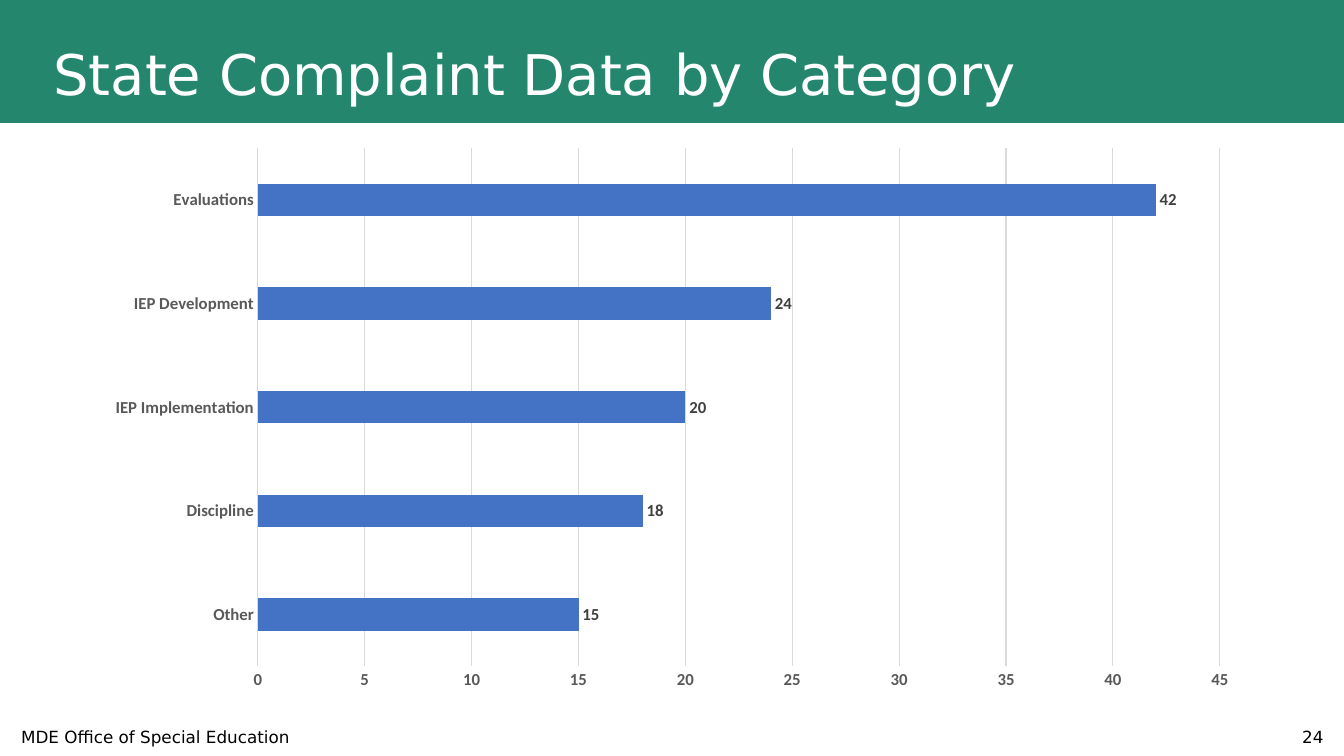
from pptx import Presentation
from pptx.chart.data import CategoryChartData
from pptx.dml.color import RGBColor
from pptx.enum.chart import XL_CHART_TYPE, XL_LABEL_POSITION, XL_TICK_MARK
from pptx.enum.shapes import MSO_SHAPE
from pptx.enum.text import MSO_ANCHOR, PP_ALIGN
from pptx.util import Pt

COLORS = {
    "banner": "25866E",
    "title": "FFFFFF",
    "footer": "000000",
    "bar": "4472C4",
    "grid": "D9D9D9",
    "axis": "595959",
    "label": "404040",
}
COMPLAINTS = {
    "Other": 15,
    "Discipline": 18,
    "IEP Implementation": 20,
    "IEP Development": 24,
    "Evaluations": 42,
}


def color(name):
    return RGBColor.from_string(COLORS[name])


def add_banner(slide, left, top, width, height):
    banner = slide.shapes.add_shape(
        MSO_SHAPE.RECTANGLE, Pt(left), Pt(top), Pt(width), Pt(height))
    banner.shadow.inherit = False
    banner.fill.solid()
    banner.fill.fore_color.rgb = color("banner")
    banner.line.color.rgb = color("banner")
    banner.line.width = Pt(0.5)


def add_text(slide, text, left, top, width, height, size, color_name,
             alignment=PP_ALIGN.LEFT, line_spacing=1.0):
    box = slide.shapes.add_textbox(Pt(left), Pt(top), Pt(width), Pt(height))
    text_frame = box.text_frame
    text_frame.word_wrap = True
    text_frame.vertical_anchor = MSO_ANCHOR.MIDDLE
    text_frame.text = text
    paragraph = text_frame.paragraphs[0]
    paragraph.alignment = alignment
    paragraph.line_spacing = line_spacing
    font = paragraph.runs[0].font
    font.name = "DejaVu Sans"
    font.size = Pt(size)
    font.color.rgb = color(color_name)


def style_chart_font(font, color_name):
    font.name = "Calibri"
    font.size = Pt(12)
    font.bold = True
    font.color.rgb = color(color_name)


def style_axis(axis):
    axis.major_tick_mark = XL_TICK_MARK.NONE
    axis.minor_tick_mark = XL_TICK_MARK.NONE
    style_chart_font(axis.tick_labels.font, "axis")


def style_hairline(line):
    line.color.rgb = color("grid")
    line.width = Pt(0.75)


def add_complaint_chart(slide, left, top, width, height):
    data = CategoryChartData()
    data.categories = list(COMPLAINTS)
    data.add_series("Series 1", list(COMPLAINTS.values()))
    chart = slide.shapes.add_chart(
        XL_CHART_TYPE.BAR_CLUSTERED,
        Pt(left), Pt(top), Pt(width), Pt(height), data).chart
    chart.has_legend = False
    chart.has_title = False
    style_chart_font(chart.font, "footer")

    style_axis(chart.category_axis)
    style_hairline(chart.category_axis.format.line)
    style_axis(chart.value_axis)
    chart.value_axis.format.line.fill.background()
    chart.value_axis.minimum_scale = 0
    chart.value_axis.maximum_scale = 45
    chart.value_axis.major_unit = 5
    style_hairline(chart.value_axis.major_gridlines.format.line)

    plot = chart.plots[0]
    plot.vary_by_categories = False
    plot.gap_width = 219
    bars = plot.series[0].format.fill
    bars.solid()
    bars.fore_color.rgb = color("bar")
    plot.has_data_labels = True
    labels = plot.data_labels
    labels.show_value = True
    labels.position = XL_LABEL_POSITION.OUTSIDE_END
    style_chart_font(labels.font, "label")


def main():
    presentation = Presentation()
    presentation.slide_width = Pt(960)
    presentation.slide_height = Pt(540)
    slide = presentation.slides.add_slide(presentation.slide_layouts[6])

    add_banner(slide, 0, 0.5, 960, 87)
    add_text(slide, "State Complaint Data by Category",
             31, 22, 894, 66, 40, "title", line_spacing=0.9)
    add_complaint_chart(slide, 66, 98, 828, 403)
    add_text(slide, "MDE Office of Special Education",
             8, 511.5, 324, 29, 12, "footer")
    add_text(slide, "24", 736.5, 512, 216, 29, 12, "footer", PP_ALIGN.RIGHT)

    presentation.save("out.pptx")


if __name__ == "__main__":
    main()
